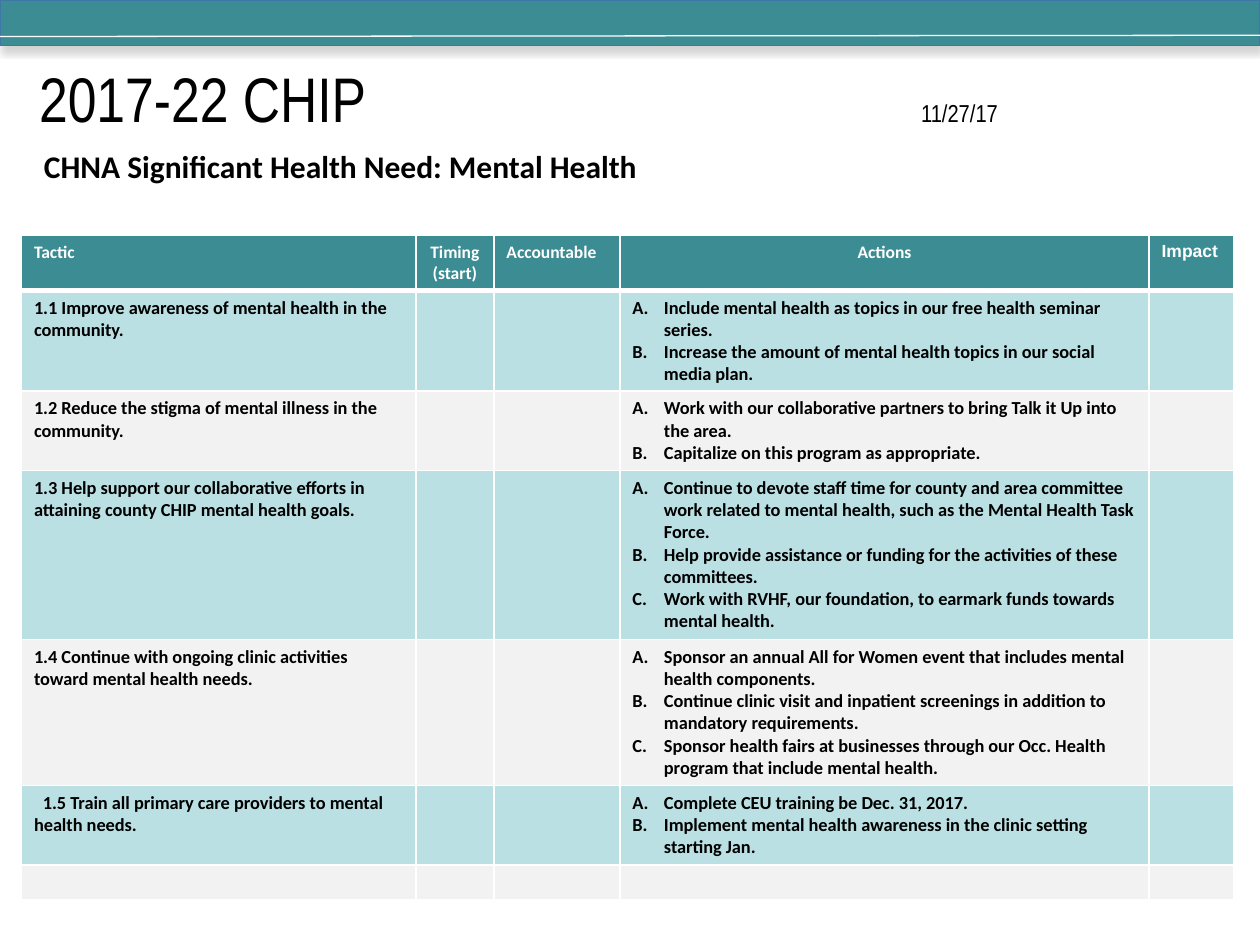
from lxml import etree
from pptx import Presentation
from pptx.dml.color import RGBColor
from pptx.enum.shapes import MSO_CONNECTOR as CONNECTOR, MSO_SHAPE as SHAPE
from pptx.enum.text import MSO_ANCHOR as ANCHOR, MSO_AUTO_SIZE as AUTO_SIZE, PP_ALIGN as ALIGN
from pptx.oxml.ns import qn
from pptx.util import Inches, Pt

TEAL, PALE_TEAL, PALE_GRAY = "3C8C93", "BBE0E3", "F2F2F2"
BLACK, WHITE, BLUE = "000000", "FFFFFF", "3E76A8"

HEADERS = ["Tactic", "Timing (start)", "Accountable", "Actions", "Impact"]
COLUMN_WIDTHS = [3.13, 0.62, 1, 4.2, 0.67]
ROW_HEIGHTS = [0.43, 0.8, 0.63, 1.34, 1.16, 0.63, 0.27]
CENTERED = {"Timing (start)", "Actions"}
PLAN = [
    ("1.1 Improve awareness of mental health in the community.", [
        "Include mental health as topics in our free health seminar series.",
        "Increase the amount of mental health topics in our social media plan."]),
    ("1.2 Reduce the stigma of mental illness in the community.", [
        "Work with our collaborative partners to bring Talk it Up into the area.",
        "Capitalize on this program as appropriate."]),
    ("1.3 Help support our collaborative efforts in attaining county CHIP mental health goals.", [
        "Continue to devote staff time for county and area committee work related to "
        "mental health, such as the Mental Health Task Force.",
        "Help provide assistance or funding for the activities of these committees.",
        "Work with RVHF, our foundation, to earmark funds towards mental health."]),
    ("1.4 Continue with ongoing clinic activities toward mental health needs.", [
        "Sponsor an annual All for Women event that includes mental health components.",
        "Continue clinic visit and inpatient screenings in addition to mandatory requirements.",
        "Sponsor health fairs at businesses through our Occ. Health program that include "
        "mental health."]),
    ("1.5 Train all primary care providers to mental health needs.", [
        "Complete CEU training be Dec. 31, 2017.",
        "Implement mental health awareness in the clinic setting starting Jan."]),
    ("", []),
]


def color(value):
    return RGBColor.from_string(value)


def add_xml(parent, tag, **attributes):
    element = etree.SubElement(parent, qn(tag))
    for name, value in attributes.items():
        element.set(name, str(value))
    return element


class SlideBuilder:
    font = "Calibri"

    def __init__(self, slide):
        self.slide = slide

    def run(self, paragraph, text, size, font=None, ink=BLACK, bold=False):
        run = paragraph.add_run()
        run.text = text
        run.font.size, run.font.bold = Pt(size), bold
        run.font.name = font or self.font
        run.font.color.rgb = color(ink)

    def band(self, left, top, width, height):
        shape = self.slide.shapes.add_shape(
            SHAPE.RECTANGLE, Inches(left), Inches(top), Inches(width), Inches(height))
        shape.fill.solid()
        shape.fill.fore_color.rgb = color(TEAL)
        shape.line.color.rgb = color(BLUE)
        shape.line.width = Pt(0.75)
        shape.shadow.inherit = False
        effects = shape._element.spPr.find(qn("a:effectLst"))
        shadow = add_xml(effects, "a:outerShdw", blurRad=Pt(4), dist=Pt(3), dir=90 * 60000)
        add_xml(add_xml(shadow, "a:srgbClr", val=BLACK), "a:alpha", val=16000)

    def line(self, x1, y1, x2, y2):
        connector = self.slide.shapes.add_connector(
            CONNECTOR.STRAIGHT, Inches(x1), Inches(y1), Inches(x2), Inches(y2))
        connector.line.color.rgb = color(WHITE)
        connector.line.width = Pt(0.75)
        add_xml(connector._element.spPr, "a:effectLst")

    def title(self, left, top, width, height, text, date, date_tab):
        title = self.slide.shapes.title
        title.left, title.top = Inches(left), Inches(top)
        title.width, title.height = Inches(width), Inches(height)
        frame = title.text_frame
        frame.auto_size, frame.vertical_anchor = AUTO_SIZE.NONE, ANCHOR.MIDDLE
        paragraph = frame.paragraphs[0]
        paragraph.alignment = ALIGN.LEFT
        tabs = add_xml(paragraph._p.get_or_add_pPr(), "a:tabLst")
        add_xml(tabs, "a:tab", pos=Inches(date_tab), algn="l")
        self.run(paragraph, text + "\t", 36, "Arial Narrow")
        self.run(paragraph, date, 14, "Arial Narrow")

    def heading(self, left, top, width, height, text):
        box = self.slide.shapes.add_textbox(
            Inches(left), Inches(top), Inches(width), Inches(height))
        box.text_frame.word_wrap = False
        self.run(box.text_frame.paragraphs[0], text, 18, bold=True)

    def style_cell(self, cell, fill, bottom=1):
        properties = cell._tc.get_or_add_tcPr()
        for side, width in (("L", 1), ("R", 1), ("T", 1), ("B", bottom)):
            border = add_xml(properties, f"a:ln{side}", w=Pt(width))
            add_xml(add_xml(border, "a:solidFill"), "a:srgbClr", val=WHITE)
        cell.fill.solid()
        cell.fill.fore_color.rgb = color(fill)

    def actions(self, cell, items):
        frame = cell.text_frame
        for index, item in enumerate(items):
            paragraph = frame.add_paragraph() if index else frame.paragraphs[0]
            properties = paragraph._p.get_or_add_pPr()
            properties.set("marL", str(Inches(0.25)))
            properties.set("indent", str(Inches(-0.25)))
            add_xml(properties, "a:buFont", typeface="+mj-lt")
            add_xml(properties, "a:buAutoNum", type="alphaUcPeriod")
            self.run(paragraph, item, 10.5, bold=True)

    def table(self, left, top):
        table = self.slide.shapes.add_table(
            len(ROW_HEIGHTS), len(COLUMN_WIDTHS), Inches(left), Inches(top),
            Inches(sum(COLUMN_WIDTHS)), Inches(sum(ROW_HEIGHTS))).table
        table.horz_banding = False
        for column, width in zip(table.columns, COLUMN_WIDTHS):
            column.width = Inches(width)
        for row, height in zip(table.rows, ROW_HEIGHTS):
            row.height = Inches(height)

        # Header row
        for cell, header in zip(table.rows[0].cells, HEADERS):
            self.style_cell(cell, TEAL, bottom=3)
            paragraph = cell.text_frame.paragraphs[0]
            paragraph.alignment = ALIGN.CENTER if header in CENTERED else ALIGN.LEFT
            font = "Arial" if header == "Impact" else None
            self.run(paragraph, header, 10, font, WHITE, bold=True)

        # One row per tactic, with alternating fills
        for number, (tactic, items) in enumerate(PLAN, start=1):
            cells = list(table.rows[number].cells)
            for cell in cells:
                self.style_cell(cell, PALE_TEAL if number % 2 else PALE_GRAY)
            if tactic:
                paragraph = cells[0].text_frame.paragraphs[0]
                if tactic.startswith("1.5"):
                    paragraph._p.get_or_add_pPr().set("indent", str(Inches(0.07)))
                self.run(paragraph, tactic, 10.5, bold=True)
            self.actions(cells[3], items)
            for cell in cells:
                if not cell.text:
                    add_xml(cell.text_frame.paragraphs[0]._p, "a:endParaRPr", sz=1050)


def main():
    presentation = Presentation()
    presentation.slide_width, presentation.slide_height = Inches(10), Inches(7.5)
    builder = SlideBuilder(presentation.slides.add_slide(presentation.slide_layouts[5]))

    # Top band
    builder.band(0, 0, 10, 0.36)
    builder.line(0, 0.29, 10, 0.28)

    # Title, date and heading
    builder.title(0.21, 0.5, 9.57, 0.54, "2017-22 CHIP", "11/27/17", 7)
    builder.heading(0.25, 1.12, 4.95, 0.71, "CHNA Significant Health Need: Mental Health")

    # Action plan
    builder.table(0.17, 1.87)
    presentation.save("out.pptx")


if __name__ == "__main__":
    main()
